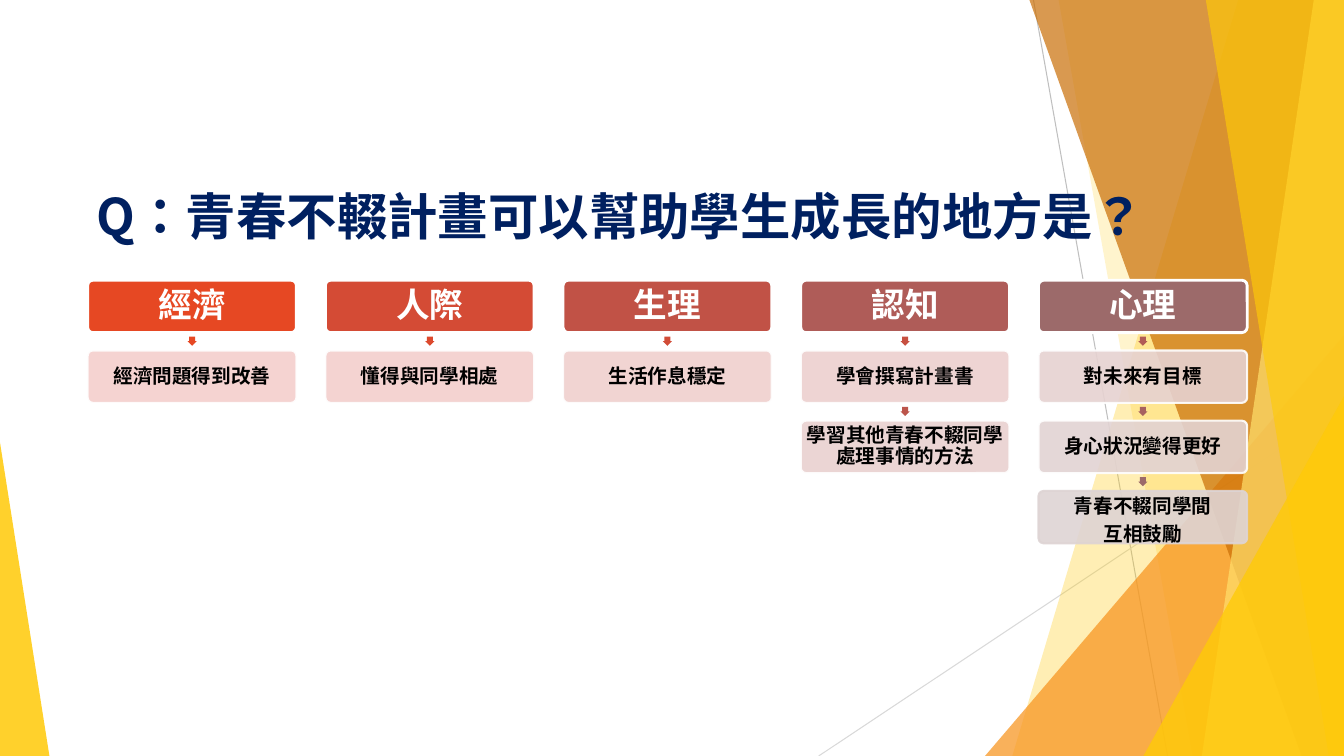
"""Builds a slide of five growth areas, each a column of steps under a heading."""
from lxml.etree import SubElement
from pptx import Presentation
from pptx.dml.color import RGBColor
from pptx.enum.lang import MSO_LANGUAGE_ID
from pptx.enum.shapes import MSO_CONNECTOR, MSO_SHAPE
from pptx.enum.text import MSO_ANCHOR, PP_ALIGN
from pptx.oxml.ns import qn
from pptx.util import Inches, Pt

THEME = {
    "font": "Noto Sans CJK SC",
    "title_size": 36, "heading_size": 24, "step_size": 14,
    "navy": "002060", "white": "FFFFFF", "black": "000000",
    "gold": "FFCA08", "orange": "F8931D", "brown": "CA6F06", "pale_gold": "FFDF6B",
    "grey": "BFBFBF", "light_grey": "D9D9D9", "last_card": "DED4D4",
}
WIDTH, HEIGHT = 13.33, 7.5
GRID_LEFT, GRID_TOP = 0.87, 2.78
COLUMN_PITCH, ROW_PITCH = 9.43 / 4, 2.09 / 3
CARD_WIDTH, CARD_HEIGHT = 2.07, 0.52
ARROW_SIZE, ARROW_DROP = 0.09, 0.56


def paint(shape, fill, opacity=100, line=None, line_width=0):
    """Fill and outline a shape at one opacity, without a shadow."""
    shape.shadow.inherit = False
    shape.fill.solid()
    shape.fill.fore_color.rgb = RGBColor.from_string(fill)
    if line:
        shape.line.color.rgb = RGBColor.from_string(line)
        shape.line.width = Pt(line_width)
    else:
        shape.line.fill.background()
    if opacity < 100:
        for color in shape._element.spPr.iter(qn("a:srgbClr")):
            SubElement(color, qn("a:alpha"), val=str(opacity * 1000))


def write(shape, text, size, color, align, line_spacing, margin):
    """Set bold text, one paragraph a line, in the middle of a shape."""
    frame = shape.text_frame
    frame.word_wrap = True
    frame.vertical_anchor = MSO_ANCHOR.MIDDLE
    frame.margin_left = frame.margin_right = Inches(margin)
    frame.margin_top = frame.margin_bottom = Inches(min(margin, 0.05))
    frame.text = text
    for paragraph in frame.paragraphs:
        paragraph.alignment = align
        paragraph.line_spacing = line_spacing
        font = paragraph.font
        font.size, font.bold, font.name = Pt(size), True, THEME["font"]
        font.color.rgb = RGBColor.from_string(color)
        font.language_id = MSO_LANGUAGE_ID.TRADITIONAL_CHINESE
        latin = paragraph._p.pPr.find(qn("a:defRPr")).find(qn("a:latin"))
        latin.addnext(SubElement(latin.getparent(), qn("a:ea"), typeface=THEME["font"]))


presentation = Presentation()
presentation.slide_width, presentation.slide_height = Inches(WIDTH), Inches(HEIGHT)
slide = presentation.slides.add_slide(presentation.slide_layouts[6])
shapes = slide.shapes

for start_x, start_y, end_x, color in [
    (10.25, 0, 11.58, "grey"),
    (WIDTH, 4.03, 8.12, "light_grey"),
]:
    connector = shapes.add_connector(
        MSO_CONNECTOR.STRAIGHT,
        Inches(start_x), Inches(start_y), Inches(end_x), Inches(HEIGHT))
    connector.line.color.rgb = RGBColor.from_string(THEME[color])
    connector.line.width = Pt(0.75)
    SubElement(connector._element.spPr, qn("a:effectLst"))

BANDS = [
    ("band", 12.28, 10.04, "gold", 30),
    ("band", 10.5, 11.83, "gold", 20),
    ("triangle", 9.77, 3.33, 3.56, 1, "orange", 72),
    ("band", 10.21, 12.91, "brown", 70),
    ("band", 13.03, 11.92, "pale_gold", 70),
    ("band", 11.96, 13.18, "gold", 65),
    ("triangle", 11.34, 3.93, 1.99, 1, "gold", 80),
    ("triangle", 0, 4.39, 0.49, 0, "gold", 85),
]
for kind, *geometry, color, opacity in BANDS:
    if kind == "band":
        top_x, bottom_x = geometry
        builder = shapes.build_freeform(Inches(top_x), 0)
        builder.add_line_segments([
            (Inches(x), Inches(y))
            for x, y in [(WIDTH, 0), (WIDTH, HEIGHT), (bottom_x, HEIGHT)]])
        shape = builder.convert_to_shape()
    else:
        left, top, width, apex = geometry
        shape = shapes.add_shape(
            MSO_SHAPE.ISOSCELES_TRIANGLE,
            Inches(left), Inches(top), Inches(width), Inches(HEIGHT - top))
        shape.adjustments[0] = apex
    paint(shape, THEME[color], opacity)

title = shapes.add_textbox(Inches(0.86), Inches(1.76), Inches(11.59), Inches(0.76))
write(title, "Q：青春不輟計畫可以幫助學生成長的地方是？",
      THEME["title_size"], THEME["navy"], PP_ALIGN.LEFT, 1.0, 0.1)

COLUMNS = [
    ("經濟", "E64823", [("經濟問題得到改善", "F5CFCD", "E64823")]),
    ("人際", "D44B35", [("懂得與同學相處", "F3CFCD", "DC492D")]),
    ("生理", "C15246", [("生活作息穩定", "F0D0CE", "D14C37")]),
    ("認知", "AF5C58", [
        ("學會撰寫計畫書", "EDD0CF", "C75041"),
        ("學習其他青春不輟同學處理事情的方法", "E9D1D0", "BC554B"),
    ]),
    ("心理", "9C6A6A", [
        ("對未來有目標", "E6D2D1", "B15B56"),
        ("身心狀況變得更好", "E2D3D3", "A76260"),
        ("青春不輟同學間\n互相鼓勵", THEME["last_card"], "9C6A6A"),
    ]),
]
for column, (heading, heading_fill, steps) in enumerate(COLUMNS):
    left = GRID_LEFT + column * COLUMN_PITCH
    for row, (text, fill, arrow_fill) in enumerate([(heading, heading_fill, None), *steps]):
        top = GRID_TOP + row * ROW_PITCH
        if row:
            arrow = shapes.add_shape(
                MSO_SHAPE.RIGHT_ARROW,
                Inches(left + (CARD_WIDTH - ARROW_SIZE) / 2),
                Inches(top - ROW_PITCH + ARROW_DROP),
                Inches(ARROW_SIZE), Inches(ARROW_SIZE))
            arrow.rotation = 90
            arrow.adjustments[0] = 0.667
            paint(arrow, arrow_fill)
        card = shapes.add_shape(
            MSO_SHAPE.ROUNDED_RECTANGLE,
            Inches(left), Inches(top), Inches(CARD_WIDTH), Inches(CARD_HEIGHT))
        card.adjustments[0] = 0.1
        if row:
            outline = fill if fill == THEME["last_card"] else THEME["white"]
            spacing = Pt(20) if "\n" in text else 0.9
            paint(card, fill, 90, outline, 1.5)
            write(card, text, THEME["step_size"], THEME["black"],
                  PP_ALIGN.CENTER, spacing, 0.02)
        else:
            paint(card, fill, 100, THEME["white"], 2)
            write(card, text, THEME["heading_size"], THEME["white"],
                  PP_ALIGN.CENTER, 0.9, 0.03)

presentation.save("out.pptx")
